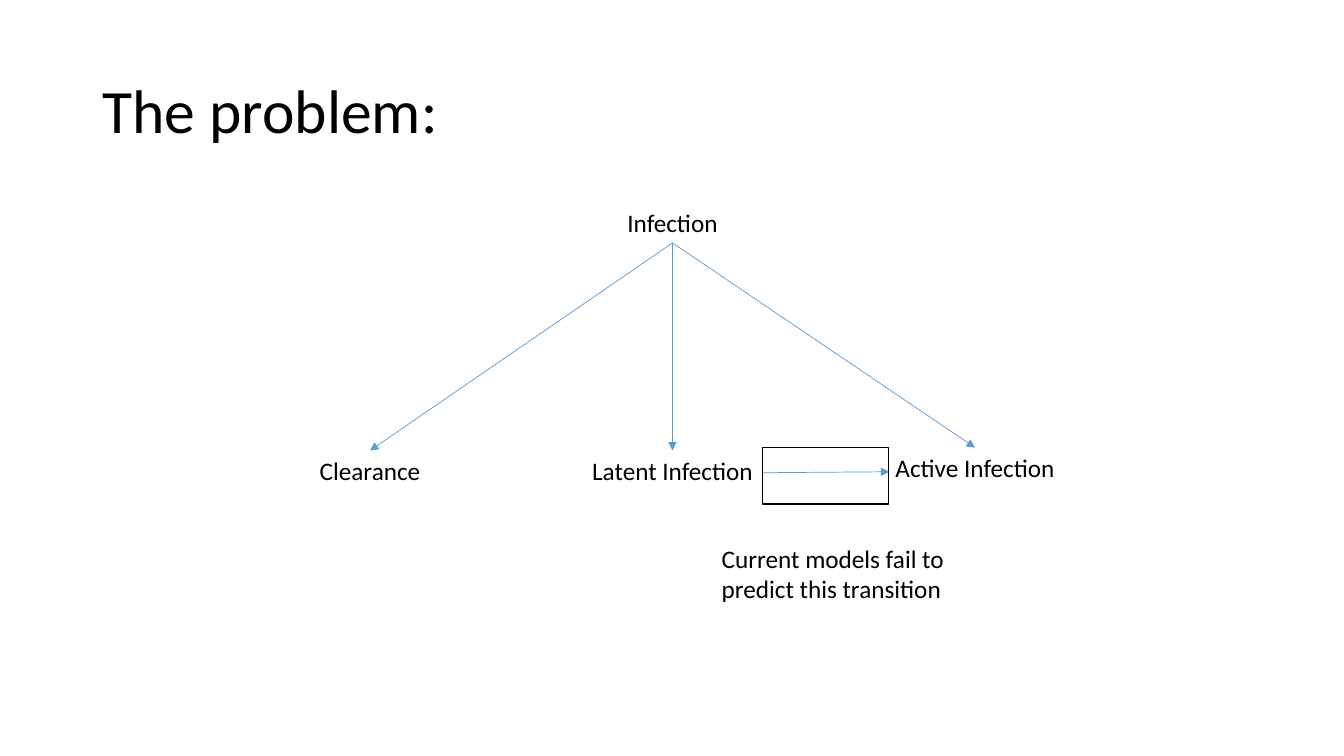
from lxml.etree import SubElement
from pptx import Presentation
from pptx.dml.color import RGBColor as Rgb
from pptx.enum.shapes import MSO_CONNECTOR as Connector, MSO_SHAPE as Shape
from pptx.enum.text import MSO_ANCHOR as Anchor, PP_ALIGN as Align
from pptx.oxml.ns import qn
from pptx.util import Inches, Pt

COLORS = {"text": "000000", "arrow": "5B9BD5", "frame": "000000"}


def write(box, text, size=18, align=Align.LEFT, anchor=Anchor.TOP, spacing=1.0):
    frame = box.text_frame
    frame.word_wrap = True
    frame.vertical_anchor = anchor
    para = frame.paragraphs[0]
    para.alignment = align
    para.line_spacing = spacing
    span = para.add_run()
    span.text = text
    span.font.name = "Calibri"
    span.font.size = Pt(size)
    span.font.color.rgb = Rgb.from_string(COLORS["text"])


class Diagram:
    """Draws text, arrows and frames on one slide in a shared style."""

    def __init__(self, page):
        self.shapes = page.shapes

    def text(self, left, top, width, height, text, **style):
        box = self.shapes.add_textbox(*map(Inches, (left, top, width, height)))
        write(box, text, **style)

    def arrow(self, start, end):
        line = self.shapes.add_connector(
            Connector.STRAIGHT, *map(Inches, (*start, *end)))
        line.line.color.rgb = Rgb.from_string(COLORS["arrow"])
        line.line.width = Pt(0.5)
        SubElement(line.line._get_or_add_ln(), qn("a:tailEnd"), type="triangle")
        SubElement(line._element.spPr, qn("a:effectLst"))

    def frame(self, left, top, width, height):
        box = self.shapes.add_shape(
            Shape.RECTANGLE, *map(Inches, (left, top, width, height)))
        box.shadow.inherit = False
        box.fill.background()
        box.line.color.rgb = Rgb.from_string(COLORS["frame"])
        box.line.width = Pt(1)


def main():
    deck = Presentation()
    deck.slide_width, deck.slide_height = Inches(13.33), Inches(7.5)
    diagram = Diagram(deck.slides.add_slide(deck.slide_layouts[6]))

    diagram.text(0.92, 0.4, 11.5, 1.45, "The problem:",
                 size=44, anchor=Anchor.MIDDLE, spacing=0.9)

    label_width, label_height = 3, 0.4
    middle, infection_top = 6.67, 2.01
    outcomes = [("Clearance", 4.47), ("Latent Infection", 4.47),
                ("Active Infection", 4.44)]

    def label(text, center, top):
        diagram.text(center - label_width / 2, top, label_width, label_height,
                     text, align=Align.CENTER)

    label("Infection", middle, infection_top)
    for column, (outcome, top) in enumerate(outcomes, start=-1):
        center = middle + column * label_width
        label(outcome, center, top)
        diagram.arrow((middle, infection_top + label_height), (center, top))

    diagram.arrow((7.56, 4.69), (8.82, 4.68))
    diagram.frame(7.56, 4.44, 1.25, 0.56)
    diagram.text(7.06, 5.34, 3.12, 0.71,
                 "Current models fail to predict this transition")

    deck.save("out.pptx")


if __name__ == "__main__":
    main()
